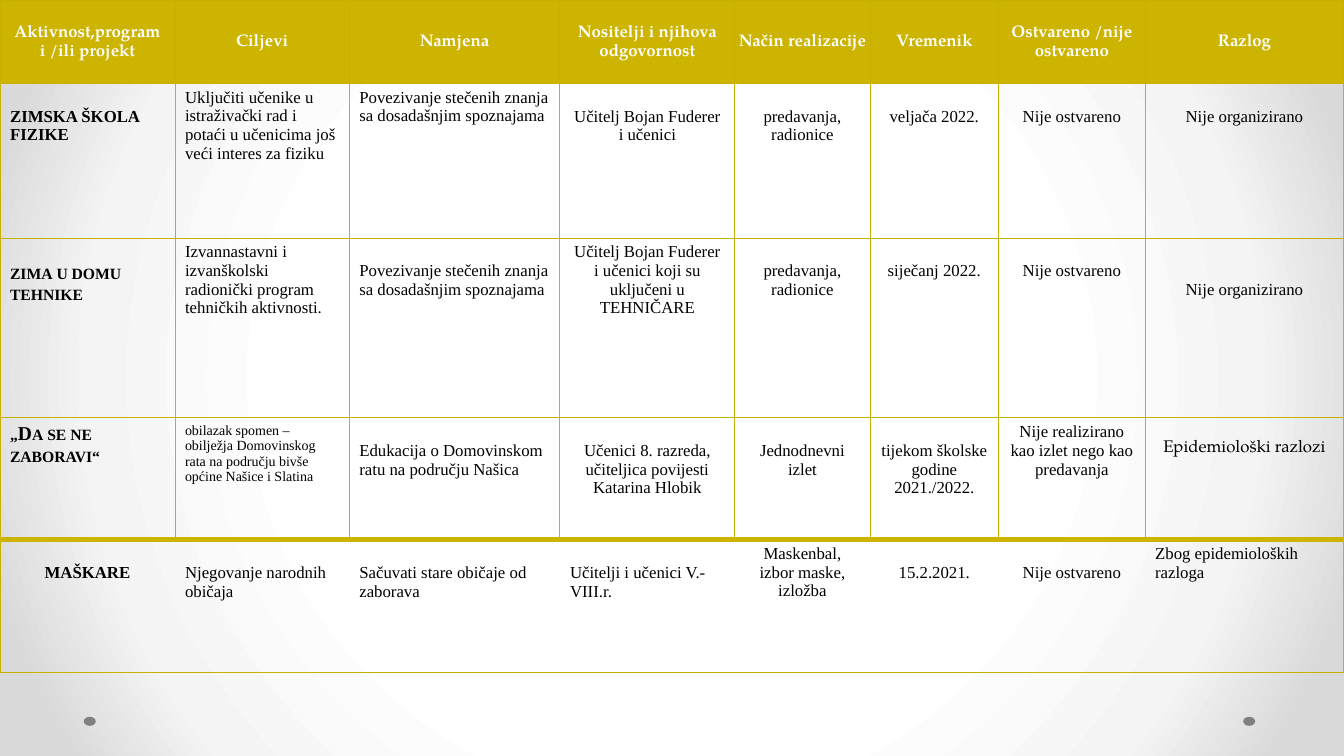
import pptx
import pptx.util
import pptx.dml.color
import pptx.enum.shapes
import pptx.enum.text
import lxml.etree
from dataclasses import dataclass

Pt = pptx.util.Pt
RGB = pptx.dml.color.RGBColor
ALIGN = pptx.enum.text.PP_ALIGN
NS = "http://schemas.openxmlformats.org/drawingml/2006/main"


@dataclass(frozen=True)
class Look:
    font: str
    size: float = 12
    bold: bool = False
    small: bool = False
    color: str = "000000"
    space: float = 1.0


class Theme:
    gold = "CCB400"
    edge = "C8B000"
    dot = "808080"
    back = ((0, "FFFFFF"), (50, "FFFFFF"), (76, "F4F4F4"), (92, "DADADA"), (100, "DADADA"))
    thin, thick = 0.75, 4
    line = 13.4  # height of one body line
    head = Look("TeX Gyre Pagella", bold=True, color="FFFFFF", space=1.15)
    body = Look("Times New Roman")
    name = Look("Times New Roman", bold=True)
    caps = Look("Times New Roman", 14, True, True)
    note = Look("Times New Roman", 10)
    book = Look("TeX Gyre Pagella")


COLS = (125, 124.5, 150.5, 125, 96.5, 92, 104.5, 142)
ROWS = (59.5, 110.5, 128.5, 87, 95)
HEAD = ("Aktivnost,program i /ili projekt", "Ciljevi", "Namjena",
        "Nositelji i njihova odgovornost", "Način realizacije", "Vremenik",
        "Ostvareno /nije ostvareno", "Razlog")

# Each cell: text, lines down from the top, alignment, look (body if left out)
L, C = ALIGN.LEFT, ALIGN.CENTER
PLANS = (
    (("ZIMSKA ŠKOLA FIZIKE", 1, L, Theme.name),
     ("Uključiti učenike u istraživački rad i potaći u učenicima još veći interes za fiziku", 0, L),
     ("Povezivanje stečenih znanja sa dosadašnjim spoznajama", 0, L),
     ("Učitelj Bojan Fuderer i učenici", 1, C),
     ("predavanja, radionice", 1, C),
     ("veljača 2022.", 1, C),
     ("Nije ostvareno", 1, C),
     ("Nije organizirano", 1, C)),
    (("zima u domu tehnike", 1, L, Theme.caps),
     ("Izvannastavni i izvanškolski radionički program tehničkih aktivnosti.", 0, L),
     ("Povezivanje stečenih znanja sa dosadašnjim spoznajama", 1, L),
     ("Učitelj Bojan Fuderer i učenici koji su uključeni u TEHNIČARE", 0, C),
     ("predavanja, radionice", 1, C),
     ("siječanj 2022.", 1, C),
     ("Nije ostvareno", 1, C),
     ("Nije organizirano", 2, C)),
    (("„Da se ne zaboravi“", 0, L, Theme.caps),
     ("obilazak spomen – obilježja Domovinskog rata na području bivše općine Našice i Slatina",
      0, L, Theme.note),
     ("Edukacija o Domovinskom ratu na području Našica", 1, L),
     ("Učenici 8. razreda,\nučiteljica povijesti\nKatarina Hlobik", 1, C),
     ("Jednodnevni izlet", 1, C),
     ("tijekom školske godine 2021./2022.", 1, C),
     ("Nije realizirano kao izlet nego kao predavanja", 0, C),
     ("Epidemiološki razlozi", 0.9, C, Theme.book)),
    (("MAŠKARE", 1, C, Theme.name),
     ("Njegovanje narodnih običaja", 1, L),
     ("Sačuvati stare običaje od zaborava", 1, L),
     ("Učitelji i učenici V.-VIII.r.", 1, L),
     ("Maskenbal, izbor maske, izložba", 0, C),
     ("15.2.2021.", 1, C),
     ("Nije ostvareno", 1, C),
     ("Zbog epidemioloških razloga", 0, L)),
)


def node(up, tag, **attrs):
    return lxml.etree.SubElement(up, f"{{{NS}}}{tag}", **attrs)


def paint(slide):
    """Round grey gradient behind the slide."""
    slide.background.fill.solid()
    solid = slide.element.find(f".//{{{NS}}}solidFill")
    grad = lxml.etree.Element(f"{{{NS}}}gradFill", rotWithShape="1")
    stops = node(grad, "gsLst")
    for pos, color in Theme.back:
        node(node(stops, "gs", pos=str(pos * 1000)), "srgbClr", val=color)
    ring = node(grad, "path", path="circle")
    node(ring, "fillToRect", l="50000", t="50000", r="50000", b="50000")
    solid.getparent().replace(solid, grad)


def rule(cell, row, col):
    """Cell borders: thick above the last row, no upright lines inside it."""
    last, end = len(ROWS) - 1, len(COLS) - 1
    thin, thick = (Theme.edge, Theme.thin), (Theme.gold, Theme.thick)
    sides = {
        "lnL": None if row == last and col > 0 else thin,
        "lnR": None if row == last and col < end else thin,
        "lnT": thick if row == last else thin,
        "lnB": thick if row == last - 1 else thin,
    }
    props = cell._tc.get_or_add_tcPr()
    for tag, side in sides.items():
        if side:
            color, width = side
            line = node(props, tag, w=str(Pt(width)))
            node(node(line, "solidFill"), "srgbClr", val=color)
        else:
            node(node(props, tag, w="0"), "noFill")


def write(cell, text, align, look):
    cell.text_frame.text = text
    for para in cell.text_frame.paragraphs:
        para.alignment = align
        para.line_spacing = look.space
        for run in para.runs:
            font = run.font
            font.name, font.size, font.bold = look.font, Pt(look.size), look.bold
            font.color.rgb = RGB.from_string(look.color)
            if look.small:
                run._r.get_or_add_rPr().set("cap", "small")


def grid(slide, left, top):
    """Table of activities."""
    frame = slide.shapes.add_table(len(ROWS), len(COLS), Pt(left), Pt(top),
                                   Pt(sum(COLS)), Pt(sum(ROWS)))
    table = frame.table
    table.first_row = table.horz_banding = False
    for col, width in zip(table.columns, COLS):
        col.width = Pt(width)
    for row, height in zip(table.rows, ROWS):
        row.height = Pt(height)

    # Header row
    for col, text in enumerate(HEAD):
        cell = table.cell(0, col)
        rule(cell, 0, col)
        cell.fill.solid()
        cell.fill.fore_color.rgb = RGB.from_string(Theme.gold)
        cell.margin_left = cell.margin_right = Pt(2.8)
        cell.margin_top = cell.margin_bottom = 0
        cell.vertical_anchor = pptx.enum.text.MSO_ANCHOR.MIDDLE
        write(cell, text, C, Theme.head)

    # Activity rows
    for row, plan in enumerate(PLANS, 1):
        for col, (text, drop, align, *look) in enumerate(plan):
            cell = table.cell(row, col)
            rule(cell, row, col)
            cell.fill.background()
            cell.margin_top = Pt(3.6 + drop * Theme.line)
            write(cell, text, align, look[0] if look else Theme.body)


def dots(slide, left, top, width):
    """A small dot at each end of the footer."""
    wide, high = 8.6, 6.5
    for x in (left, left + width - wide):
        dot = slide.shapes.add_shape(pptx.enum.shapes.MSO_SHAPE.OVAL,
                                     Pt(x), Pt(top), Pt(wide), Pt(high))
        dot.shadow.inherit = False
        dot.fill.solid()
        dot.fill.fore_color.rgb = RGB.from_string(Theme.dot)
        dot.line.fill.background()


def main():
    deck = pptx.Presentation()
    deck.slide_width, deck.slide_height = Pt(960), Pt(540)
    slide = deck.slides.add_slide(deck.slide_layouts[6])
    paint(slide)
    dots(slide, 59.8, 512, 836.8)
    grid(slide, 0, 0)
    deck.save("out.pptx")


if __name__ == "__main__":
    main()
